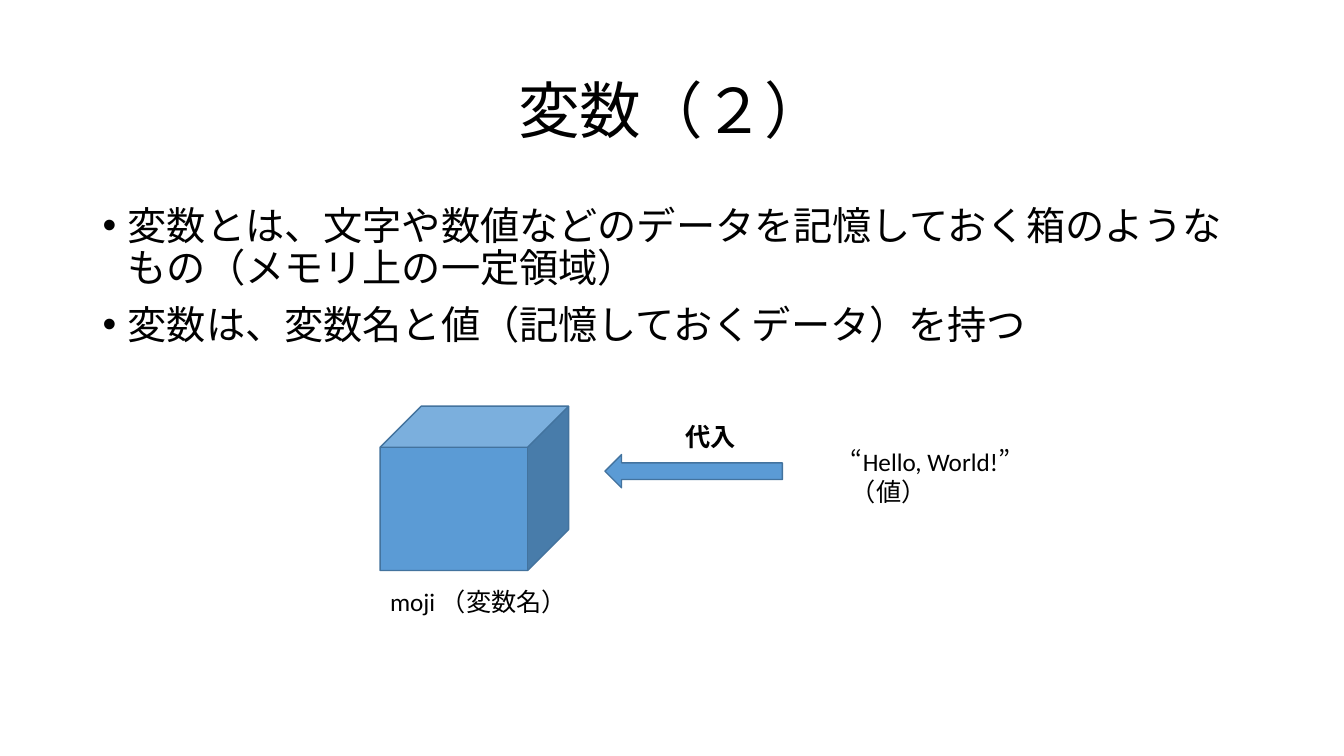
from lxml import etree
from pptx import Presentation
from pptx.dml.color import RGBColor
from pptx.enum.lang import MSO_LANGUAGE_ID
from pptx.enum.shapes import MSO_SHAPE
from pptx.enum.text import MSO_ANCHOR, PP_ALIGN
from pptx.oxml.ns import qn
from pptx.util import Inches, Pt

CUBE = MSO_SHAPE.CUBE
ARROW = MSO_SHAPE.LEFT_ARROW
MIDDLE = MSO_ANCHOR.MIDDLE
TOP = MSO_ANCHOR.TOP
CENTER = PP_ALIGN.CENTER
LEFT = PP_ALIGN.LEFT
JAPANESE = MSO_LANGUAGE_ID.JAPANESE
FONT = "Calibri"
COLORS = {"text": "000000", "fill": "5B9BD5", "line": "43739E"}


def color(name):
    return RGBColor.from_string(COLORS[name])


def add_bullet(para):
    props = para._p.get_or_add_pPr()
    props.set("indent", str(Inches(-0.25)))
    etree.SubElement(props, qn("a:buFont")).set("typeface", "Arial")
    etree.SubElement(props, qn("a:buChar")).set("char", "•")


def add_text(slide, text, box, size=18, bold=False, align=LEFT, anchor=TOP,
             line=1.0, before=0, margin=0, bullet=False):
    frame = slide.shapes.add_textbox(*map(Inches, box)).text_frame
    frame.word_wrap = True
    frame.vertical_anchor = anchor
    frame.text = text
    for para in frame.paragraphs:
        para.alignment = align
        para.line_spacing = line
        para.space_before = Pt(before)
        para._p.get_or_add_pPr().set("marL", str(Inches(margin)))
        if bullet:
            add_bullet(para)
        for run in para.runs:
            run.font.name = FONT
            run.font.size = Pt(size)
            run.font.bold = bold
            run.font.color.rgb = color("text")
            run.font.language_id = JAPANESE


def add_solid(slide, kind, box):
    shape = slide.shapes.add_shape(kind, *map(Inches, box))
    shape.shadow.inherit = False
    shape.fill.solid()
    shape.fill.fore_color.rgb = color("fill")
    shape.line.color.rgb = color("line")
    shape.line.width = Pt(1)


def main():
    deck = Presentation()
    deck.slide_width = Inches(13.33)
    deck.slide_height = Inches(7.5)
    slide = deck.slides.add_slide(deck.slide_layouts[6])

    add_text(slide, "変数（２）", (0.92, 0.4, 11.5, 1.45),
             size=44, align=CENTER, anchor=MIDDLE, line=0.9)
    points = [
        "変数とは、文字や数値などのデータを記憶しておく箱のようなもの（メモリ上の一定領域）",
        "変数は、変数名と値（記憶しておくデータ）を持つ",
    ]
    add_text(slide, "\n".join(points), (0.92, 2, 11.5, 4.76),
             size=28, line=0.9, before=10, margin=0.25, bullet=True)

    add_solid(slide, CUBE, (3.77, 4.03, 1.87, 1.63))
    add_solid(slide, ARROW, (6, 4.51, 1.76, 0.33))
    add_text(slide, "moji （変数名）", (3.77, 5.77, 2.03, 0.41))
    add_text(slide, "“Hello, World!” （値）", (8.34, 4.38, 2.19, 0.71))
    add_text(slide, "代入", (6.2, 4.13, 1.26, 0.4), bold=True, margin=0.5)

    deck.save("out.pptx")


if __name__ == "__main__":
    main()
